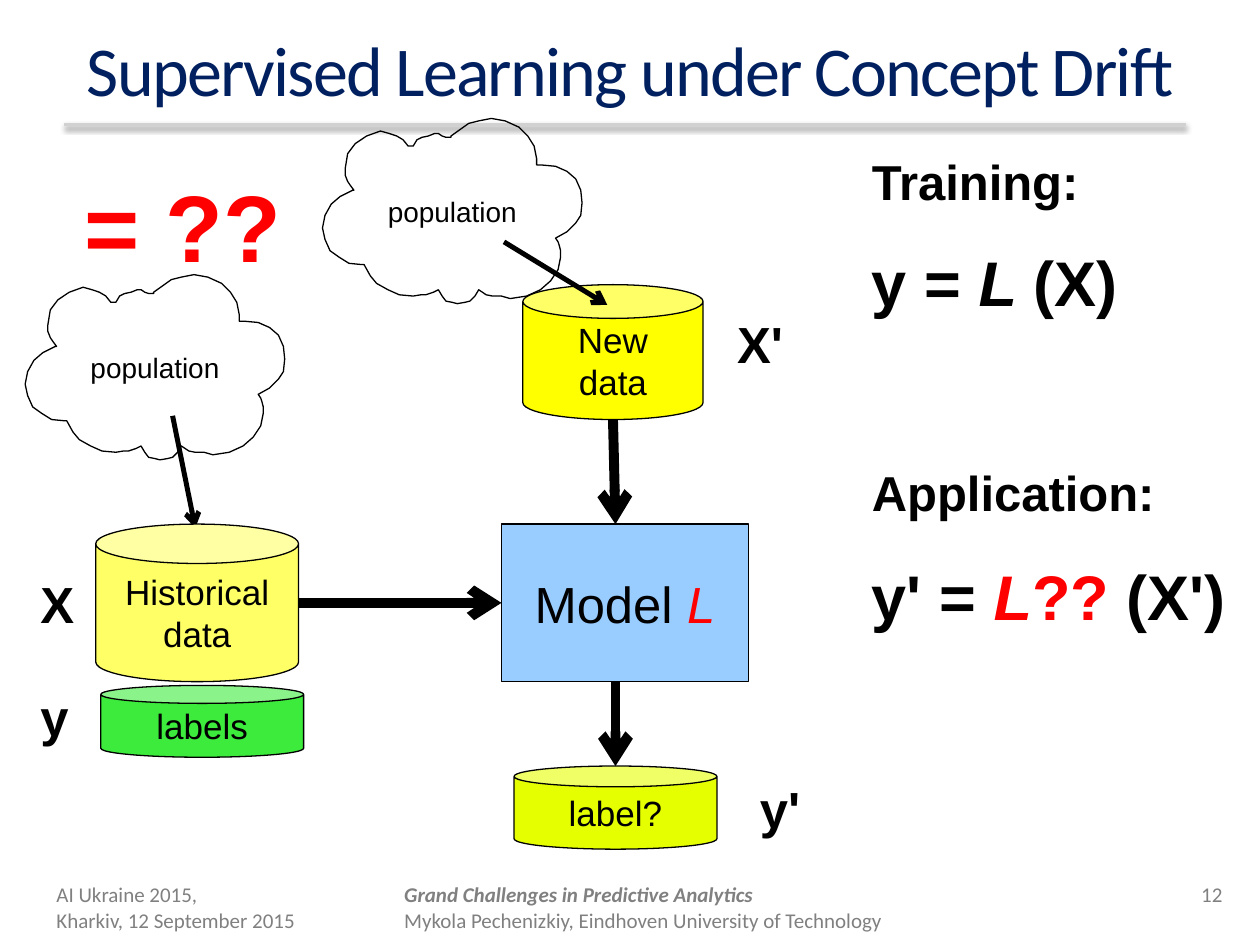
import pptx
import pptx.util
import pptx.dml.color
import pptx.enum.shapes
import pptx.enum.text
import pptx.oxml
import pptx.oxml.ns

Inches, Pt = pptx.util.Inches, pptx.util.Pt
SHAPE = pptx.enum.shapes.MSO_SHAPE
ALIGN = pptx.enum.text.PP_ALIGN
ANCHOR = pptx.enum.text.MSO_ANCHOR

THEME = {
    "body": "Arial", "heading": "Calibri",
    "ink": "000000", "navy": "002060", "alert": "FF0000", "grey": "808080",
    "rule": "D1D1D1", "model": "99CCFF",
    "title_size": 40, "question": 54, "formula": 36, "symbol": 29,
    "label": 28, "data": 20, "cloud": 16, "footer": 12,
    "thick": 5.67, "thin": 2.83, "hairline": 0,
}
INSETS = (0.09, 0.04, 0.09, 0.04)
FOOTER_INSETS = (0.1, 0.05, 0.1, 0.05)

TITLE = "Supervised Learning under Concept Drift"
# A run is (text, style); in a style "i" is italic, "b" bold and "r" red.
MODEL = (3.98, 4.16, 1.96, 1.25)
MODEL_RUNS = [("Model ", ""), ("L", "ir")]
STORES = {  # lines, box, fill
    "new": (["New", "data"], (4.15, 2.26, 1.43, 1.07), "FFFF00"),
    "historical": (["Historical", "data"], (0.76, 4.16, 1.61, 1.25), "FFFF66"),
    "labels": (["labels"], (0.8, 5.44, 1.61, 0.57), "3DEB3D"),
    "predicted": (["label?"], (4.08, 6.08, 1.61, 0.66), "E6FF00"),
}
POPULATIONS = [(0.2, 2.18), (2.56, 0.94)]
CLOUD_SIZE = (2.06, 1.47)
CLOUD_OUTLINE = [  # hundredths of an inch
    (185, 95), (187, 98), (188, 101), (189, 105), (189, 110), (187, 120), (181, 129),
    (173, 136), (162, 141), (149, 143), (142, 141), (135, 141), (130, 140), (124, 136),
    (121, 141), (117, 145), (113, 146), (107, 147), (103, 146), (98, 145), (95, 141),
    (92, 136), (88, 138), (82, 140), (78, 140), (72, 141), (61, 140), (52, 136),
    (43, 131), (38, 125), (33, 116), (31, 116), (21, 115), (13, 110), (6, 105),
    (2, 96), (0, 87), (2, 77), (7, 68), (14, 62), (24, 57), (25, 57), (22, 53),
    (20, 50), (18, 45), (18, 40), (20, 28), (26, 20), (35, 14), (46, 10), (53, 12),
    (59, 14), (64, 17), (68, 22), (72, 22), (75, 17), (79, 15), (84, 14), (89, 12),
    (92, 12), (95, 14), (98, 15), (102, 15), (102, 14), (109, 9), (116, 4), (124, 2),
    (134, 0), (145, 2), (156, 7), (163, 14), (168, 22), (170, 32), (170, 37),
    (174, 37), (185, 38), (194, 42), (201, 48), (205, 57), (206, 67), (205, 77),
    (201, 83), (194, 90),
]
SYMBOLS = [
    ("X'", (5.76, 2.44, 0.71, 0.57)), ("y'", (5.94, 6.13, 0.71, 0.57)),
    ("X", (0.23, 4.51, 0.54, 0.57)), ("y", (0.23, 5.4, 0.54, 0.57)),
]
FORMULAS = [  # runs, size, space before
    ([("Training:", "b")], "label", 0),
    ([("y = ", "b"), ("L ", "bi"), ("(X)", "b")], "formula", 19),
    ([("Application:", "b")], "label", 82),
    ([("y' = ", "b"), ("L", "bir"), ("?? ", "br"), ("(X')", "b")], "formula", 21),
]
FOOTERS = [
    ([[("AI Ukraine 2015,", "")], [("Kharkiv, 12 September 2015", "")]],
     (0.35, 6.95, 2.24, 0.4), ALIGN.LEFT),
    ([[("12", "")]], (9.15, 6.95, 0.65, 0.4), ALIGN.RIGHT),
    ([[("Grand Challenges in Predictive Analytics", "bi")],
      [("Mykola Pechenizkiy, Eindhoven University of Technology", "")]],
     (3.11, 6.95, 6.14, 0.4), ALIGN.LEFT),
]


def rgb(value):
    return pptx.dml.color.RGBColor.from_string(value)


def inches(lengths):
    return [Inches(length) for length in lengths]


def write(frame, paragraphs, sizes, align=ALIGN.LEFT, anchor=ANCHOR.TOP,
          gaps=None, font="body", color="ink", insets=INSETS):
    """Fill a text frame; sizes and gaps hold one entry for each paragraph."""
    frame.word_wrap = True
    frame.vertical_anchor = anchor
    (frame.margin_left, frame.margin_top,
     frame.margin_right, frame.margin_bottom) = inches(insets)
    for index, runs in enumerate(paragraphs):
        paragraph = frame.add_paragraph() if index else frame.paragraphs[0]
        paragraph.alignment = align
        if gaps and gaps[index]:
            paragraph.space_before = Pt(gaps[index])
        for text, style in runs:
            run = paragraph.add_run()
            run.text = text
            run.font.name = THEME[font]
            run.font.size = Pt(THEME[sizes[index]])
            run.font.bold = "b" in style
            run.font.italic = "i" in style
            run.font.color.rgb = rgb(THEME["alert" if "r" in style else color])


def add_text(slide, box, paragraphs, sizes, **options):
    write(slide.shapes.add_textbox(*inches(box)).text_frame, paragraphs, sizes, **options)


def outline(shape, paragraphs, size, fill=None):
    """Give a diagram part its hairline, its fill and its centred text."""
    shape.shadow.inherit = False
    shape.line.color.rgb = rgb(THEME["ink"])
    shape.line.width = Pt(THEME["hairline"])
    if fill:
        shape.fill.solid()
        shape.fill.fore_color.rgb = rgb(fill)
    else:
        shape.fill.background()
    write(shape.text_frame, paragraphs, [size] * len(paragraphs),
          align=ALIGN.CENTER, anchor=ANCHOR.MIDDLE)


def add_line(slide, start, end, color, width):
    line = slide.shapes.add_connector(
        pptx.enum.shapes.MSO_CONNECTOR.STRAIGHT, *inches(start + end))
    line.line.color.rgb = rgb(color)
    line.line.width = Pt(width)
    effects = pptx.oxml.parse_xml(f"<a:effectLst {pptx.oxml.ns.nsdecls('a')}/>")
    line.element.spPr.append(effects)
    return line, effects


def add_arrow(slide, start, end, weight):
    line, _ = add_line(slide, start, end, THEME["ink"], THEME[weight])
    line.line._get_or_add_ln().append(pptx.oxml.parse_xml(
        f"<a:tailEnd {pptx.oxml.ns.nsdecls('a')} type='arrow'/>"))


def add_heading(slide):
    title = slide.shapes.title
    title.left, title.top, title.width, title.height = inches((0.5, 0.08, 9, 0.92))
    write(title.text_frame, [[(TITLE, "")]], ["title_size"], align=ALIGN.CENTER,
          anchor=ANCHOR.MIDDLE, font="heading", color="navy")
    title.text_frame.paragraphs[0].runs[0].font._element.set("spc", "-100")
    _, effects = add_line(slide, (0.51, 0.99), (9.41, 0.99), THEME["rule"], 2)
    effects.append(pptx.oxml.parse_xml(
        f"<a:outerShdw {pptx.oxml.ns.nsdecls('a')} blurRad='{Pt(3.1)}' dist='{Pt(1.6)}' "
        "dir='5400000' rotWithShape='0'><a:srgbClr val='000000'>"
        "<a:alpha val='38000'/></a:srgbClr></a:outerShdw>"))


def add_diagram(slide):
    for corner in POPULATIONS:
        builder = slide.shapes.build_freeform(*CLOUD_OUTLINE[0], scale=Inches(0.01))
        builder.add_line_segments(CLOUD_OUTLINE[1:], close=True)
        outline(builder.convert_to_shape(*inches(corner)), [[("population", "")]], "cloud")

    left, top, width, height = MODEL
    model = slide.shapes.add_shape(SHAPE.RECTANGLE, *inches(MODEL))
    outline(model, [MODEL_RUNS], "symbol", THEME["model"])

    new, historical, predicted = (
        STORES[key][1] for key in ("new", "historical", "predicted"))
    axis = predicted[0] + predicted[2] / 2
    middle = top + height / 2
    add_arrow(slide, (historical[0] + historical[2], middle), (left, middle), "thick")
    add_arrow(slide, (new[0] + new[2] / 2, new[1] + new[3]), (axis, top), "thick")
    add_arrow(slide, (axis, top + height), (axis, predicted[1]), "thick")
    add_arrow(slide, (1.37, 3.3), (1.55, 4.19), "thin")
    for lines, box, fill in STORES.values():
        store = slide.shapes.add_shape(SHAPE.CAN, *inches(box))
        outline(store, [[(line, "")] for line in lines], "data", fill)
    add_arrow(slide, (4, 1.92), (4.82, 2.42), "thin")

    for symbol, box in SYMBOLS:
        add_text(slide, box, [[(symbol, "b")]], ["symbol"])
    add_text(slide, (0.58, 1.29, 1.75, 0.99), [[("= ??", "br")]], ["question"])


def main():
    deck = pptx.Presentation()
    deck.slide_width, deck.slide_height = inches((10, 7.5))
    slide = deck.slides.add_slide(deck.slide_layouts[5])
    add_heading(slide)
    add_diagram(slide)
    formulas, sizes, gaps = zip(*FORMULAS)
    add_text(slide, (6.83, 1.16, 3.17, 4.39), formulas, sizes, gaps=gaps)
    for paragraphs, box, align in FOOTERS:
        add_text(slide, box, paragraphs, ["footer"] * len(paragraphs), align=align,
                 font="heading", color="grey", insets=FOOTER_INSETS)
    deck.save("out.pptx")


if __name__ == "__main__":
    main()
